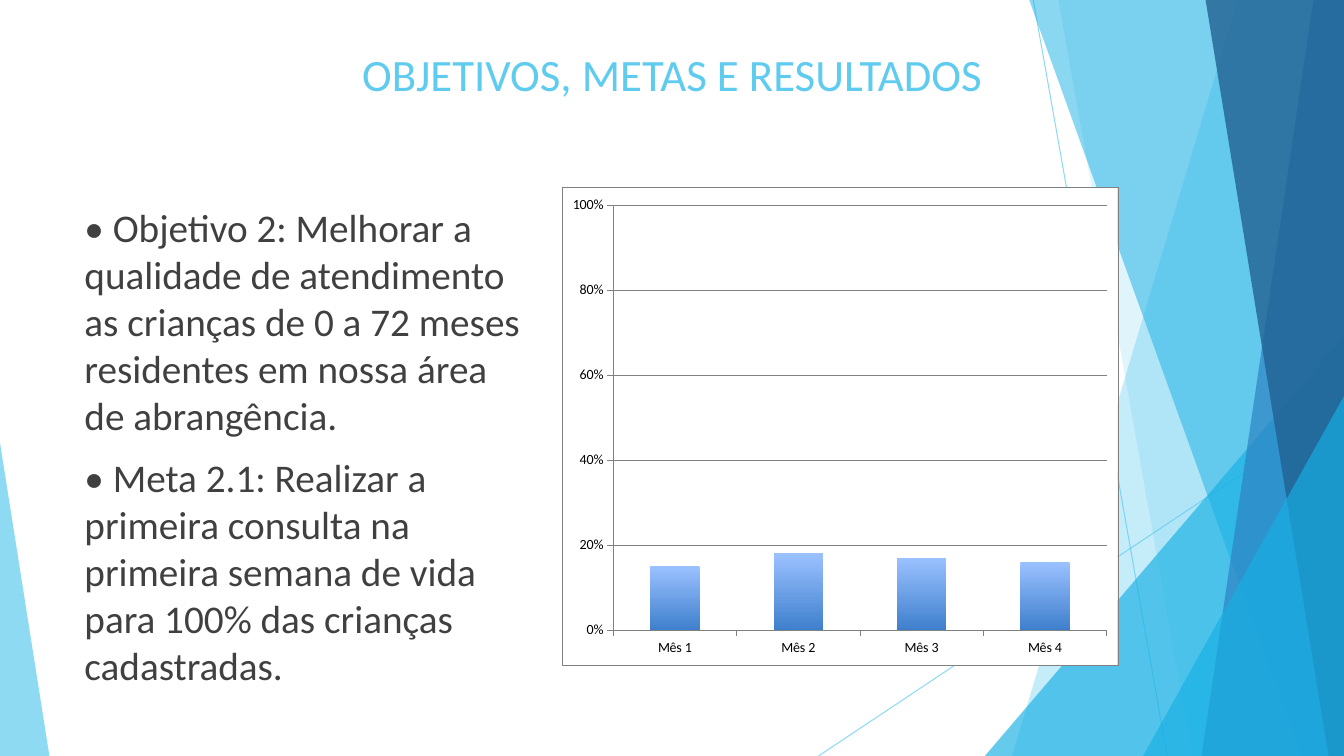
from dataclasses import dataclass

import pptx
import pptx.chart.data
import pptx.dml.color
import pptx.enum.chart
import pptx.enum.shapes
import pptx.enum.text
import pptx.oxml
import pptx.oxml.ns
import pptx.oxml.xmlchemy
import pptx.util

SLIDE_WIDTH = pptx.util.Inches(13.33)
SLIDE_HEIGHT = pptx.util.Inches(7.5)
GRID = 100
FONT = "Calibri"
COLORS = {
    "sky": "5FCBEF",
    "cyan": "17B0E4",
    "blue": "2E83C3",
    "navy": "226292",
    "text": "404040",
    "black": "000000",
    "white": "FFFFFF",
    "gray": "808080",
    "bar_top": "9BC1FF",
    "bar_bottom": "3F80CD",
}


@dataclass
class Box:
    column: float
    row: float
    columns: float
    rows: float


@dataclass
class Ray:
    start: tuple[float, float]
    end: tuple[float, float]


@dataclass
class Band:
    top: float
    bottom: float
    color: str
    opacity: int


@dataclass
class Wedge:
    box: Box
    tip: float
    color: str
    opacity: int


@dataclass
class TextBlock:
    box: Box
    paragraphs: list[str]
    size: int
    color: str
    alignment: pptx.enum.text.PP_ALIGN
    space_before: int


RAYS = [Ray((76.88, 0), (86.85, 100)), Ray((100, 53.73), (60.9, 100))]
FACETS = [
    Band(92.1, 75.3, "sky", 36),
    Band(78.75, 88.72, "sky", 20),
    Wedge(Box(73.28, 44.4, 26.72, 55.6), 1, "cyan", 66),
    Band(76.58, 96.82, "cyan", 50),
    Band(97.72, 89.4, "blue", 70),
    Band(89.7, 98.85, "navy", 80),
    Wedge(Box(85.05, 52.4, 14.95, 47.6), 1, "cyan", 66),
    Wedge(Box(0, 58.53, 3.68, 41.47), 0, "sky", 70),
]
TEXTS = [
    TextBlock(Box(6.9, 5.47, 86.25, 19.33), ["OBJETIVOS, METAS E RESULTADOS"],
              32, "sky", pptx.enum.text.PP_ALIGN.CENTER, 0),
    TextBlock(Box(5.55, 26.27, 34.35, 61.87), [
        "• Objetivo 2: Melhorar a qualidade de atendimento as crianças "
        "de 0 a 72 meses residentes em nossa área de abrangência.",
        "• Meta 2.1: Realizar a primeira consulta na primeira semana "
        "de vida para 100% das crianças cadastradas.",
    ], 28, "text", pptx.enum.text.PP_ALIGN.LEFT, 10),
]
CHART_BOX = Box(41.78, 24.8, 41.4, 63.2)
MONTHLY_SHARES = {"Mês 1": 0.15, "Mês 2": 0.18, "Mês 3": 0.17, "Mês 4": 0.16}


def across(columns: float) -> int:
    return round(SLIDE_WIDTH * columns / GRID)


def down(rows: float) -> int:
    return round(SLIDE_HEIGHT * rows / GRID)


def place(box: Box) -> tuple[int, int, int, int]:
    return across(box.column), down(box.row), across(box.columns), down(box.rows)


def rgb(name: str) -> pptx.dml.color.RGBColor:
    return pptx.dml.color.RGBColor.from_string(COLORS[name])


def set_opacity(shape, percent: int) -> None:
    color = shape._element.spPr.find(".//" + pptx.oxml.ns.qn("a:srgbClr"))
    alpha = pptx.oxml.xmlchemy.OxmlElement("a:alpha")
    alpha.set("val", str(percent * 1000))
    color.append(alpha)


def draw_ray(slide, ray: Ray) -> None:
    connector = slide.shapes.add_connector(
        pptx.enum.shapes.MSO_CONNECTOR.STRAIGHT,
        across(ray.start[0]), down(ray.start[1]), across(ray.end[0]), down(ray.end[1]))
    connector.line.color.rgb = rgb("sky")
    connector.line.width = pptx.util.Pt(0.75)
    set_opacity(connector, 70)
    connector._element.spPr.append(pptx.oxml.xmlchemy.OxmlElement("a:effectLst"))


def draw_facet(slide, facet: Band | Wedge) -> None:
    if isinstance(facet, Band):
        builder = slide.shapes.build_freeform(across(facet.top), 0)
        builder.add_line_segments([
            (across(GRID), 0),
            (across(GRID), down(GRID)),
            (across(facet.bottom), down(GRID)),
        ], close=True)
        shape = builder.convert_to_shape()
    else:
        shape = slide.shapes.add_shape(
            pptx.enum.shapes.MSO_SHAPE.ISOSCELES_TRIANGLE, *place(facet.box))
        shape.adjustments[0] = facet.tip
    shape.shadow.inherit = False
    shape.line.fill.background()
    shape.fill.solid()
    shape.fill.fore_color.rgb = rgb(facet.color)
    set_opacity(shape, facet.opacity)


def draw_text(slide, block: TextBlock) -> None:
    text_frame = slide.shapes.add_textbox(*place(block.box)).text_frame
    text_frame.word_wrap = True
    text_frame.text = "\n".join(block.paragraphs)
    for paragraph in text_frame.paragraphs:
        paragraph.alignment = block.alignment
        paragraph.space_before = pptx.util.Pt(block.space_before)
        for run in paragraph.runs:
            run.font.name = FONT
            run.font.size = pptx.util.Pt(block.size)
            run.font.color.rgb = rgb(block.color)


def style_line(line) -> None:
    line.color.rgb = rgb("gray")
    line.width = pptx.util.Pt(0.25)


def frame_chart(chart) -> None:
    frame = pptx.oxml.parse_xml(
        f'<c:spPr {pptx.oxml.ns.nsdecls("c", "a")}>'
        f'<a:solidFill><a:srgbClr val="{COLORS["white"]}"/></a:solidFill>'
        f'<a:ln w="3175"><a:solidFill><a:srgbClr val="{COLORS["gray"]}"/>'
        '</a:solidFill></a:ln></c:spPr>')
    chart._chartSpace.find(pptx.oxml.ns.qn("c:chart")).addnext(frame)


def draw_chart(slide) -> None:
    chart_data = pptx.chart.data.CategoryChartData(number_format="0%")
    chart_data.categories = list(MONTHLY_SHARES)
    chart_data.add_series("Series 1", list(MONTHLY_SHARES.values()))
    chart = slide.shapes.add_chart(
        pptx.enum.chart.XL_CHART_TYPE.COLUMN_CLUSTERED,
        *place(CHART_BOX), chart_data).chart
    chart.has_legend = False
    chart.has_title = False
    chart.font.name = FONT
    chart.font.size = pptx.util.Pt(10)
    chart.font.color.rgb = rgb("black")
    frame_chart(chart)

    for axis in (chart.category_axis, chart.value_axis):
        axis.major_tick_mark = pptx.enum.chart.XL_TICK_MARK.OUTSIDE
        style_line(axis.format.line)
    value_axis = chart.value_axis
    value_axis.minimum_scale = 0
    value_axis.maximum_scale = 1
    value_axis.major_unit = 0.2
    value_axis.tick_labels.number_format = "0%"
    value_axis.tick_labels.number_format_is_linked = False
    style_line(value_axis.major_gridlines.format.line)

    plot = chart.plots[0]
    plot.gap_width = 150
    plot.vary_by_categories = False
    fill = plot.series[0].format.fill
    fill.gradient()
    fill.gradient_angle = 270
    for stop, name in zip(fill.gradient_stops, ("bar_top", "bar_bottom")):
        stop.color.rgb = rgb(name)


def main() -> None:
    presentation = pptx.Presentation()
    presentation.slide_width = SLIDE_WIDTH
    presentation.slide_height = SLIDE_HEIGHT
    slide = presentation.slides.add_slide(presentation.slide_layouts[6])
    for ray in RAYS:
        draw_ray(slide, ray)
    for facet in FACETS:
        draw_facet(slide, facet)
    for block in TEXTS:
        draw_text(slide, block)
    draw_chart(slide)
    presentation.save("out.pptx")


if __name__ == "__main__":
    main()
